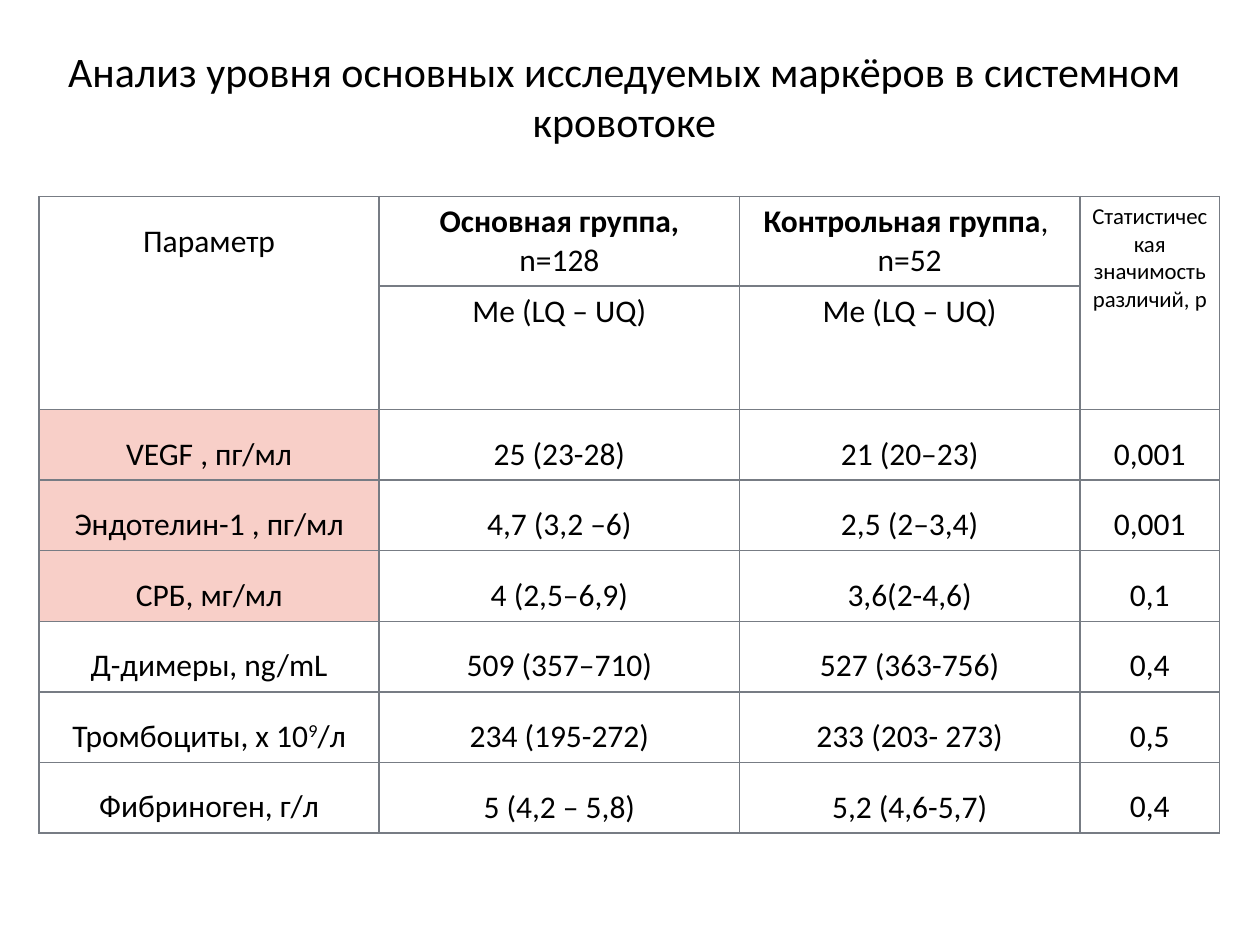
from typing import NamedTuple

from lxml import etree
from pptx import Presentation
from pptx.dml.color import RGBColor
from pptx.enum.text import MSO_ANCHOR, PP_ALIGN
from pptx.oxml.ns import qn
from pptx.util import Inches, Pt

CENTER = PP_ALIGN.CENTER
TOP, MIDDLE = MSO_ANCHOR.TOP, MSO_ANCHOR.MIDDLE
BLACK = RGBColor(0x00, 0x00, 0x00)
PINK = RGBColor(0xF8, 0xCF, 0xC8)
BORDER = RGBColor(0x77, 0x7C, 0x84)
FONT = "Calibri"
TITLE = "Анализ уровня основных исследуемых маркёров в системном кровотоке"

COLUMN_WIDTHS = (2.7, 2.86, 2.7, 1.11)
HEADER_HEIGHTS = (0.71, 0.98)
MARKER_HEIGHT = 0.56
TABLE_LEFT, TABLE_TOP = 0.31, 1.56


class Span(NamedTuple):
    text: str
    bold: bool = False
    superscript: bool = False


class Marker(NamedTuple):
    name: tuple[Span, ...]
    main_group: str
    control_group: str
    significance: str
    highlighted: bool = False
    anchor: MSO_ANCHOR = MIDDLE


MARKERS = (
    Marker((Span("VEGF , пг/мл"),), "25 (23-28)", "21 (20–23)", "0,001", True, TOP),
    Marker((Span("Эндотелин-1 , пг/мл"),), "4,7 (3,2 –6)", "2,5 (2–3,4)", "0,001", True, TOP),
    Marker((Span("СРБ, мг/мл"),), "4 (2,5–6,9)", "3,6(2-4,6)", "0,1", True),
    Marker((Span("Д-димеры, ng/mL"),), "509 (357–710)", "527 (363-756)", "0,4"),
    Marker((Span("Тромбоциты, х 10"), Span("9", superscript=True), Span("/л")),
           "234 (195-272)", "233 (203- 273)", "0,5"),
    Marker((Span("Фибриноген, г/л"),), "5 (4,2 – 5,8)", "5,2 (4,6-5,7)", "0,4"),
)


def set_paragraph(paragraph, spans: tuple[Span, ...], size: float) -> None:
    """Write centred spans; a newline inside a span becomes a line break."""
    paragraph.alignment = CENTER
    paragraph.font.name = FONT
    paragraph.font.size = Pt(size)
    paragraph.font.color.rgb = BLACK
    for span in spans:
        for index, line in enumerate(span.text.split("\n")):
            if index:
                paragraph.add_line_break()
            if line:
                run = paragraph.add_run()
                run.text = line
                run.font.bold = span.bold
                if span.superscript:
                    run.font._element.set("baseline", "30000")


def set_cell(cell, *spans: Span, size: float = 18, line_spacing: float = 1.0,
             space_after: float = 6, anchor: MSO_ANCHOR = TOP) -> None:
    paragraph = cell.text_frame.paragraphs[0]
    set_paragraph(paragraph, spans, size)
    paragraph.line_spacing = line_spacing
    paragraph.space_after = Pt(space_after)
    cell.vertical_anchor = anchor


def style_cell(cell) -> None:
    """Give a cell narrow margins, no fill and a thin border on each side."""
    cell.margin_left = cell.margin_right = Inches(0.07)
    properties = cell._tc.get_or_add_tcPr()
    for side in ("a:lnL", "a:lnR", "a:lnT", "a:lnB"):
        line = etree.SubElement(properties, qn(side), w=str(Pt(1)))
        fill = etree.SubElement(line, qn("a:solidFill"))
        etree.SubElement(fill, qn("a:srgbClr"), val=str(BORDER))
    cell.fill.background()


def add_title(slide) -> None:
    title = slide.shapes.add_textbox(Inches(0.23), Inches(0.31), Inches(9.45), Inches(0.86))
    title.text_frame.word_wrap = True
    set_paragraph(title.text_frame.paragraphs[0], (Span(TITLE),), 24)


def fill_header(table) -> None:
    for column in (0, 3):
        table.cell(0, column).merge(table.cell(1, column))
    set_cell(table.cell(0, 0), Span("Параметр"), line_spacing=1.5)
    set_cell(table.cell(0, 1), Span("Основная группа,\n", bold=True), Span("n=128"))
    set_cell(table.cell(0, 2), Span("Контрольная группа", bold=True), Span(", \nn=52"))
    set_cell(table.cell(0, 3), Span("Статистическая значимость различий, р"),
             size=13, space_after=0)
    for column in (1, 2):
        set_cell(table.cell(1, column), Span("Ме (LQ – UQ)"))


def fill_marker(table, row: int, marker: Marker) -> None:
    name, main, control, significance = (table.cell(row, column) for column in range(4))
    set_cell(name, *marker.name, line_spacing=1.5)
    set_cell(main, Span(marker.main_group), line_spacing=1.5, space_after=0,
             anchor=marker.anchor)
    set_cell(control, Span(marker.control_group), line_spacing=1.5, anchor=marker.anchor)
    set_cell(significance, Span(marker.significance), line_spacing=1.5)
    if marker.highlighted:
        name.fill.solid()
        name.fill.fore_color.rgb = PINK


def add_marker_table(slide) -> None:
    heights = HEADER_HEIGHTS + (MARKER_HEIGHT,) * len(MARKERS)
    table = slide.shapes.add_table(
        len(heights), len(COLUMN_WIDTHS), Inches(TABLE_LEFT), Inches(TABLE_TOP),
        Inches(sum(COLUMN_WIDTHS)), Inches(sum(heights))).table
    table.first_row = table.horz_banding = False
    for column, width in zip(table.columns, COLUMN_WIDTHS):
        column.width = Inches(width)
    for row, height in zip(table.rows, heights):
        row.height = Inches(height)
    for cell in table.iter_cells():
        style_cell(cell)
    fill_header(table)
    for row, marker in enumerate(MARKERS, start=len(HEADER_HEIGHTS)):
        fill_marker(table, row, marker)


def main() -> None:
    presentation = Presentation()
    presentation.slide_width, presentation.slide_height = Inches(10), Inches(7.5)
    slide = presentation.slides.add_slide(presentation.slide_layouts[6])
    add_marker_table(slide)
    add_title(slide)
    presentation.save("out.pptx")


if __name__ == "__main__":
    main()
